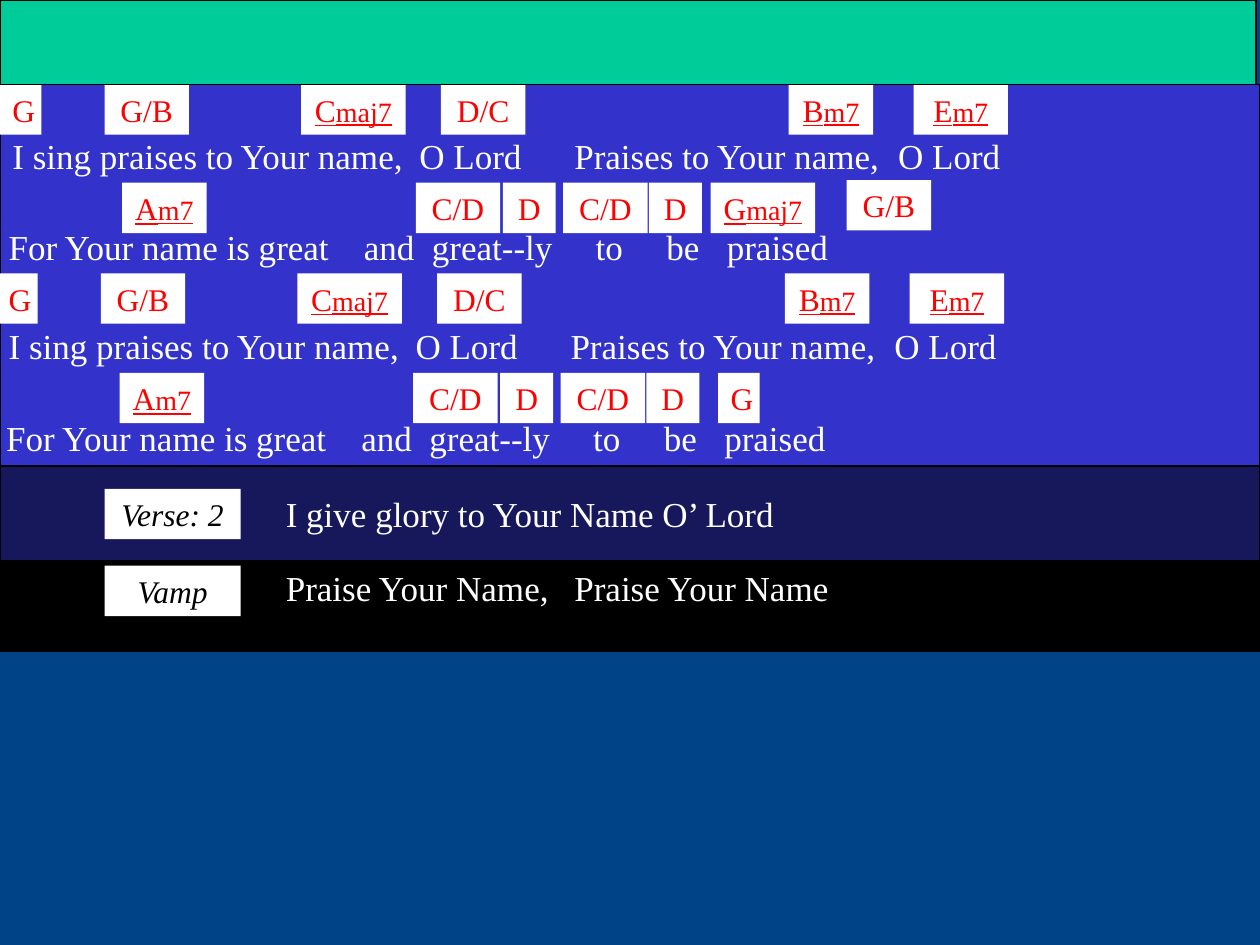
from pptx import Presentation
from pptx.dml.color import RGBColor
from pptx.enum.shapes import MSO_SHAPE
from pptx.enum.text import MSO_ANCHOR, MSO_AUTO_SIZE, PP_ALIGN
from pptx.oxml.ns import qn
from pptx.util import Inches, Pt
from lxml.etree import SubElement

WHITE = RGBColor(0xFF, 0xFF, 0xFF)
BLACK = RGBColor(0x00, 0x00, 0x00)
RED = RGBColor(0xFF, 0x00, 0x00)
GREEN = RGBColor(0x00, 0xCC, 0x99)
BLUE = RGBColor(0x33, 0x33, 0xCC)
NAVY = RGBColor(0x17, 0x17, 0x5C)
BACKDROP = RGBColor(0x00, 0x44, 0x87)

CHORD_WIDTHS = {"G": 0.33, "D": 0.42, "Em7": 0.75, "Cmaj7": 0.83, "Gmaj7": 0.83}
PRAISES = ("I sing praises to Your name,\tO Lord\tPraises to Your name,\tO Lord", (3.23, 4.46, 7.03))
GREATNESS = ("For Your name is great\tand\tgreat--ly\tto\tbe\tpraised", (2.82, 3.36, 4.66, 5.22, 5.70))
PRAISES_CHORDS = ((0, "G"), (0.83, "G/B"), (2.39, "C", "maj7"), (3.5, "D/C"), (6.26, "B", "m7"), (7.25, "E", "m7"))
GREATNESS_CHORDS = ((0.97, "A", "m7"), (3.3, "C/D"), (3.99, "D"), (4.47, "C/D"), (5.15, "D"))


class SongSlide:
    """Draws the bands, lyrics and chords of a song on one slide."""

    font = "Times New Roman"
    lyric_size, chord_size, suffix_size = Pt(20), Pt(18), Pt(16)

    def __init__(self, slide):
        self.slide = slide
        self.slide.background.fill.solid()
        self.slide.background.fill.fore_color.rgb = BACKDROP

    def rectangle(self, left, top, width, height, color):
        rectangle = self.slide.shapes.add_shape(
            MSO_SHAPE.RECTANGLE, Inches(left), Inches(top), Inches(width), Inches(height))
        rectangle.shadow.inherit = False
        rectangle.fill.solid()
        rectangle.fill.fore_color.rgb = color
        return rectangle

    def band(self, top, width, height, color):
        band = self.rectangle(0, top, width, height, color)
        band.line.color.rgb = BLACK
        band.line.width = Pt(0.75)

    def run(self, paragraph, text, size, color):
        run = paragraph.add_run()
        run.text = text
        run.font.name = self.font
        run.font.size = size
        run.font.color.rgb = color
        return run

    def fit(self, frame):
        frame.word_wrap = True
        frame.auto_size = MSO_AUTO_SIZE.SHAPE_TO_FIT_TEXT
        frame.vertical_anchor = MSO_ANCHOR.TOP
        return frame.paragraphs[0]

    def lyric(self, left, top, width, words, stops=()):
        lyric = self.slide.shapes.add_textbox(Inches(left), Inches(top), Inches(width), Inches(0.44))
        paragraph = self.fit(lyric.text_frame)
        self.run(paragraph, words, self.lyric_size, WHITE)
        if stops:
            tabs = SubElement(paragraph._p.get_or_add_pPr(), qn("a:tabLst"))
            for stop in stops:
                SubElement(tabs, qn("a:tab"), pos=str(Inches(stop)), algn="l")

    def tag(self, left, top, width):
        tag = self.rectangle(left, top, width, 0.4, WHITE)
        tag.line.fill.background()
        paragraph = self.fit(tag.text_frame)
        paragraph.alignment = PP_ALIGN.CENTER
        return paragraph

    def chord(self, left, top, root, suffix=""):
        paragraph = self.tag(left, top, CHORD_WIDTHS.get(root + suffix, 0.67))
        root_run = self.run(paragraph, root, self.chord_size, RED)
        if suffix:
            root_run.font.underline = True
            self.run(paragraph, suffix, self.suffix_size, RED).font.underline = True

    def chord_row(self, top, chords, shift=0):
        for left, *name in chords:
            self.chord(left + shift, top, *name)

    def section(self, top, name):
        self.run(self.tag(0.83, top, 1.08), name, self.chord_size, BLACK).font.italic = True


def main():
    deck = Presentation()
    deck.slide_width, deck.slide_height = Inches(10), Inches(7.5)
    song = SongSlide(deck.slides.add_slide(deck.slide_layouts[6]))

    song.band(4.45, 10, 0.72, BLACK)
    song.band(3.69, 10, 0.76, NAVY)
    song.band(0.67, 10, 3.03, BLUE)

    song.lyric(0, 1.02, 10, *PRAISES)
    song.lyric(-0.03, 1.74, 10, *GREATNESS)
    song.chord_row(0.67, PRAISES_CHORDS)
    song.chord_row(1.45, GREATNESS_CHORDS)
    song.chord(5.64, 1.45, "G", "maj7")
    song.chord(6.72, 1.43, "G/B")

    song.lyric(-0.03, 2.53, 10, *PRAISES)
    song.lyric(-0.05, 3.26, 10, *GREATNESS)
    song.chord_row(2.17, PRAISES_CHORDS, -0.03)
    song.chord_row(2.96, GREATNESS_CHORDS, -0.02)
    song.chord(5.7, 2.96, "G")

    song.lyric(2.17, 3.86, 7.83, "I give glory to Your Name O’ Lord")
    song.lyric(2.17, 4.45, 7.83, "Praise Your Name,\tPraise Your Name", (2.29,))
    song.section(3.88, "Verse: 2")
    song.section(4.49, "Vamp")
    song.band(0, 9.97, 0.67, GREEN)

    deck.save("out.pptx")


if __name__ == "__main__":
    main()
